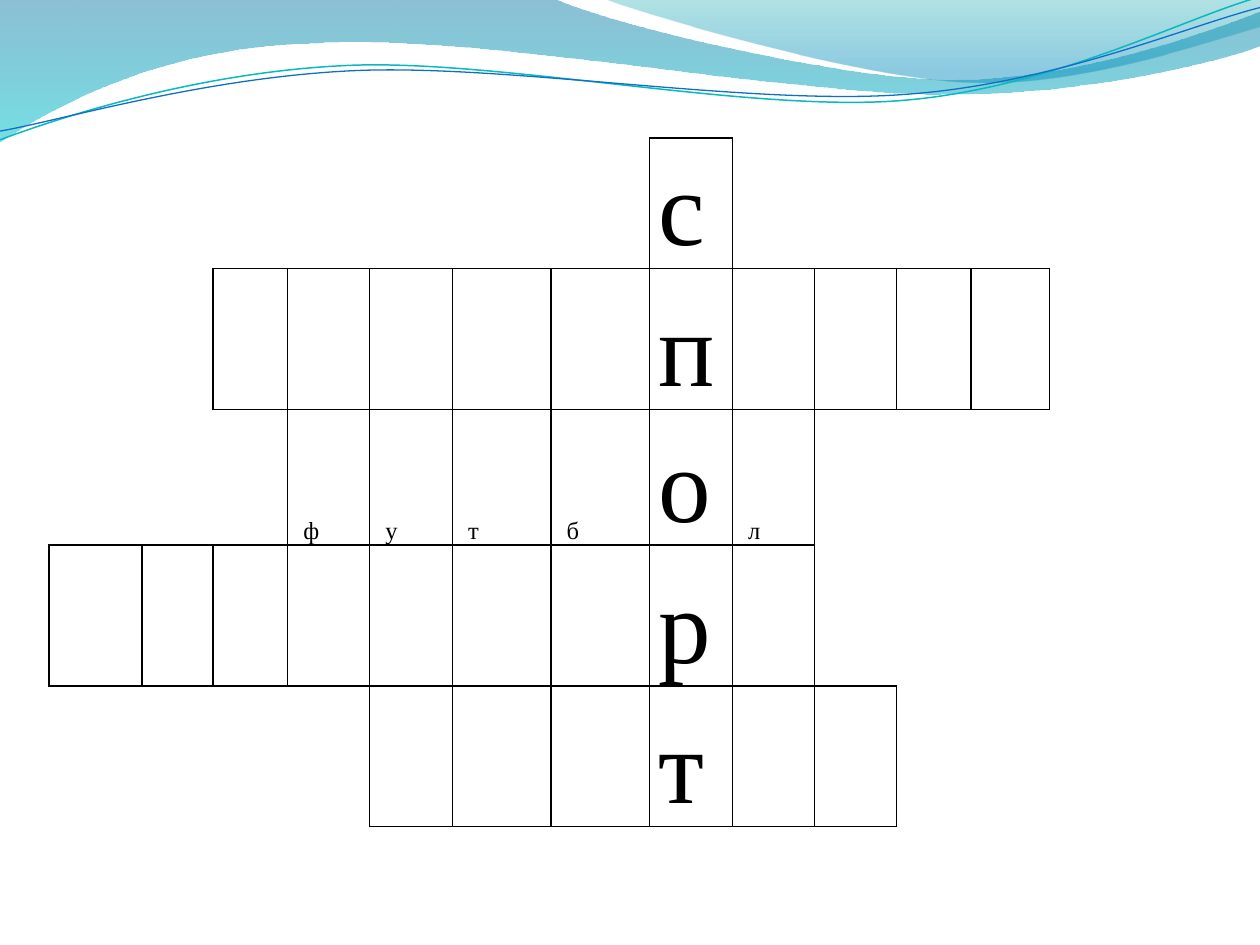
from dataclasses import dataclass

from lxml.etree import SubElement
from pptx import Presentation
from pptx.dml.color import RGBColor
from pptx.enum.text import MSO_ANCHOR
from pptx.oxml import parse_xml
from pptx.oxml.ns import nsdecls, qn
from pptx.util import Pt


@dataclass(frozen=True)
class Theme:
    font: str = "Times New Roman"
    ink: str = "000000"
    teal_line: str = "0AB8BF"
    blue_line: str = "0F6FC6"
    # Each stop: position, colour, opacity in percent
    wide_wave: tuple = ((0, "0074A1", 45), (1, "00C6CF", 55))
    right_wave: tuple = ((0, "00A1A9", 30), (0.8, "008BBF", 45))
    key_size: float = 60
    clue_size: float = 14
    border: float = 1


THEME = Theme()

# Outlines in points: a start, then straight steps (one point)
# or Bezier steps (two controls and an end).
WIDE_WAVE = [
    (0, 0),
    [(316.8, -0.7)],
    [(342.7, 12.2), (478.1, 45.4), (545.8, 45.4)],
    [(614.2, 45.4), (689.8, 18.7), (720, 6.5)],
    [(720.7, 25.9)],
    [(707.8, 31.7), (626.4, 54.7), (537.1, 54)],
    [(447.8, 54), (275, 20.2), (185, 24.5)],
    [(92.9, 25.9), (33.1, 59.8), (-0.7, 81.4)],
]
RIGHT_WAVE = [
    (344.9, -0.7),
    [(366.5, 7.9), (491, 44.6), (553.7, 46.8)],
    [(616.3, 49.7), (691.9, 23), (720, 15.1)],
    [(720, 0)],
]
TEAL_CURVE = [
    (0, 79.9),
    [(34.6, 67), (113.8, 41), (199.4, 37.4)],
    [(284.4, 33.8), (427, 64.1), (513.4, 57.6)],
    [(599.8, 51.1), (675.4, 10.8), (718.6, -1.4)],
]
BLUE_CURVE = [
    (0, 74.9),
    [(33.8, 69.1), (118.1, 43.9), (203.8, 40.3)],
    [(290.2, 36.7), (429.8, 60.5), (516.2, 54)],
    [(601.9, 48.2), (677.5, 15.1), (720, 4.3)],
]

COLUMN_WIDTHS = [53, 40.7, 42.6, 46.9, 47.3, 56.3, 56.5, 47.2, 46.9, 46.9, 42.5, 44.9, 97.9]
ROW_HEIGHTS = [74.7, 80.5, 77.4, 80.6, 80.4]
WORD_SPANS = [(7, 7), (2, 11), (3, 8), (0, 8), (4, 9)]  # first and last column
KEY_COLUMN = 7
KEY_WORD = "спорт"
CLUE_ROW = 2
CLUE_LETTERS = {3: "ф", 4: "у", 5: "т", 6: "б", 8: "л"}


def bend_steps(shape, steps):
    """Join the three straight segments of each Bezier step into one curve."""
    segments = iter(shape.element.spPr.findall(".//" + qn("a:lnTo")))
    for step in steps:
        group = [next(segments) for _ in step]
        if len(group) == 3:
            curve = parse_xml(f'<a:cubicBezTo {nsdecls("a")}/>')
            group[0].addprevious(curve)
            for segment in group:
                curve.append(segment[0])
                segment.getparent().remove(segment)


def add_outline(page, outline, closed):
    start, *steps = outline
    builder = page.shapes.build_freeform(Pt(start[0]), Pt(start[1]))
    vertices = [(Pt(x), Pt(y)) for step in steps for x, y in step]
    builder.add_line_segments(vertices, close=closed)
    shape = builder.convert_to_shape()
    bend_steps(shape, steps)
    shape.shadow.inherit = False
    return shape


def add_wave(page, outline, stops):
    shape = add_outline(page, outline, closed=True)
    shape.line.fill.background()
    shape.fill.gradient()
    shape.fill.gradient_angle = 270
    for stop, (position, colour, _) in zip(shape.fill.gradient_stops, stops):
        stop.position = position
        stop.color.rgb = RGBColor.from_string(colour)
    colours = shape.element.spPr.findall(".//" + qn("a:srgbClr"))
    for element, (_, _, opacity) in zip(colours, stops):
        SubElement(element, qn("a:alpha"), val=str(opacity * 1000))


def add_curve(page, outline, colour, width):
    shape = add_outline(page, outline, closed=False)
    shape.fill.background()
    shape.line.color.rgb = RGBColor.from_string(colour)
    shape.line.width = Pt(width)


def in_word(row, column):
    if not 0 <= row < len(WORD_SPANS):
        return False
    first, last = WORD_SPANS[row]
    return first <= column <= last


def set_borders(cell, row, column):
    """Rule every edge that touches a letter square; hide the others."""
    neighbours = {
        "lnL": (row, column - 1),
        "lnR": (row, column + 1),
        "lnT": (row - 1, column),
        "lnB": (row + 1, column),
    }
    properties = cell._tc.get_or_add_tcPr()
    for index, (tag, neighbour) in enumerate(neighbours.items()):
        ruled = in_word(row, column) or in_word(*neighbour)
        paint = (
            f'<a:solidFill><a:srgbClr val="{THEME.ink}"/></a:solidFill>' if ruled else "<a:noFill/>"
        )
        line = parse_xml(f'<a:{tag} {nsdecls("a")} w="{Pt(THEME.border)}">{paint}</a:{tag}>')
        properties.insert(index, line)


def write_letter(cell, letter, size, left_margin):
    cell.margin_left = Pt(left_margin)
    span = cell.text_frame.paragraphs[0].add_run()
    span.text = letter
    span.font.name = THEME.font
    span.font.size = Pt(size)
    span.font.color.rgb = RGBColor.from_string(THEME.ink)


def add_crossword(page, left, top):
    frame = page.shapes.add_table(
        len(ROW_HEIGHTS), len(COLUMN_WIDTHS), Pt(left), Pt(top),
        Pt(sum(COLUMN_WIDTHS)), Pt(sum(ROW_HEIGHTS)),
    )
    table = frame.table
    table.first_row = table.horz_banding = False
    for column, width in zip(table.columns, COLUMN_WIDTHS):
        column.width = Pt(width)
    for row, height in zip(table.rows, ROW_HEIGHTS):
        row.height = Pt(height)
    for row in range(len(ROW_HEIGHTS)):
        for column in range(len(COLUMN_WIDTHS)):
            cell = table.cell(row, column)
            cell.fill.background()
            cell.vertical_anchor = MSO_ANCHOR.BOTTOM
            cell.margin_left = cell.margin_right = Pt(5)
            cell.margin_top = cell.margin_bottom = Pt(0)
            set_borders(cell, row, column)
            if column == KEY_COLUMN:
                write_letter(cell, KEY_WORD[row], THEME.key_size, 5)
            elif row == CLUE_ROW and column in CLUE_LETTERS:
                write_letter(cell, CLUE_LETTERS[column], THEME.clue_size, 9)


def main():
    deck = Presentation()
    deck.slide_width, deck.slide_height = Pt(720), Pt(540)
    page = deck.slides.add_slide(deck.slide_layouts.get_by_name("Blank"))
    add_wave(page, WIDE_WAVE, THEME.wide_wave)
    add_wave(page, RIGHT_WAVE, THEME.right_wave)
    add_curve(page, TEAL_CURVE, THEME.teal_line, 0.85)
    add_curve(page, BLUE_CURVE, THEME.blue_line, 0.75)
    add_crossword(page, left=28.1, top=78.8)
    deck.save("out.pptx")


if __name__ == "__main__":
    main()
